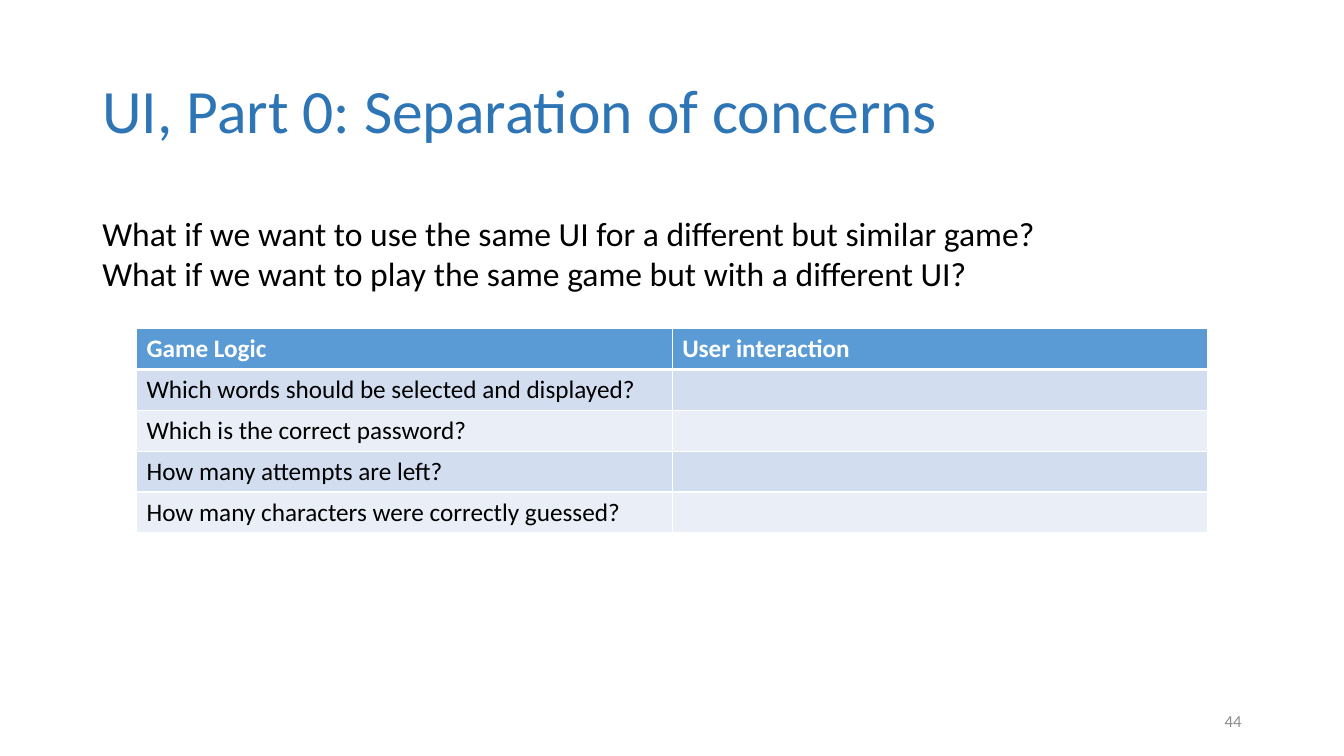
"""Build the slide on separating game logic from user interaction."""
from dataclasses import dataclass

from lxml.etree import SubElement
from pptx import Presentation
from pptx.dml.color import RGBColor
from pptx.enum.text import MSO_ANCHOR, PP_ALIGN
from pptx.oxml.ns import qn
from pptx.util import Cm, Pt

TITLE = ["UI, Part 0: Separation of concerns"]
ASKS = [
    "What if we want to use the same UI for a different but similar game?",
    "What if we want to play the same game but with a different UI?",
]
PAGE = ["44"]
ROWS = [
    ("Game Logic", "User interaction"),
    ("Which words should be selected and displayed?", ""),
    ("Which is the correct password?", ""),
    ("How many attempts are left?", ""),
    ("How many characters were correctly guessed?", ""),
]


@dataclass(frozen=True)
class Theme:
    """Hold the colours and type sizes."""
    font: str = "Calibri"
    title: str = "2E75B6"
    ink: str = "000000"
    grey: str = "8C8C8C"
    white: str = "FFFFFF"
    head: str = "5B9BD5"
    bands: tuple = ("EAEFF7", "D2DEEF")
    big: int = 44
    mid: int = 24
    cell: int = 18
    small: int = 12


THEME = Theme()


def style(par, size, color, bold=False):
    """Set the font of a paragraph."""
    font = par.font
    font.name, font.size, font.bold = THEME.font, Pt(size), bold
    font.color.rgb = RGBColor.from_string(color)


def write(slide, box, lines, size, color, anchor=MSO_ANCHOR.TOP,
          align=PP_ALIGN.LEFT, space=1.0):
    """Add a text box with one paragraph per line."""
    frame = slide.shapes.add_textbox(*map(Cm, box)).text_frame
    frame.word_wrap = True
    frame.vertical_anchor = anchor
    frame.text = "\n".join(lines)
    for par in frame.paragraphs:
        par.alignment, par.line_spacing = align, space
        style(par, size, color)


def edge(cell, side, width):
    """Add a white border before the fill of a cell."""
    line = SubElement(cell._tc.get_or_add_tcPr(), qn(f"a:ln{side}"),
                      w=str(Pt(width)))
    fill = SubElement(line, qn("a:solidFill"))
    SubElement(fill, qn("a:srgbClr"), val=THEME.white)


def grid(slide, box, rows):
    """Add the banded table."""
    table = slide.shapes.add_table(len(rows), len(rows[0]), *map(Cm, box)).table
    for i, row in enumerate(rows):
        for j, text in enumerate(row):
            cell = table.cell(i, j)
            for side in "LRTB":
                thick = (i, side) in ((0, "B"), (1, "T"))
                edge(cell, side, 3 if thick else 1)
            cell.fill.solid()
            cell.fill.fore_color.rgb = RGBColor.from_string(
                THEME.bands[i % 2] if i else THEME.head)
            cell.text = text
            style(cell.text_frame.paragraphs[0], THEME.cell,
                  THEME.ink if i else THEME.white, i == 0)


def main():
    """Lay out the slide and save it."""
    deck = Presentation()
    deck.slide_width, deck.slide_height = Cm(33.87), Cm(19.05)
    slide = deck.slides.add_slide(deck.slide_layouts[6])
    write(slide, (2.33, 1.01, 29.21, 3.68), TITLE, THEME.big, THEME.title,
          MSO_ANCHOR.MIDDLE, space=0.9)
    write(slide, (23.92, 17.66, 7.62, 1.01), PAGE, THEME.small, THEME.grey,
          MSO_ANCHOR.MIDDLE, PP_ALIGN.RIGHT)
    grid(slide, (3.44, 8.28, 27, 5.15), ROWS)
    write(slide, (2.33, 5.23, 24.82, 2.31), ASKS, THEME.mid, THEME.ink)
    deck.save("out.pptx")


if __name__ == "__main__":
    main()
